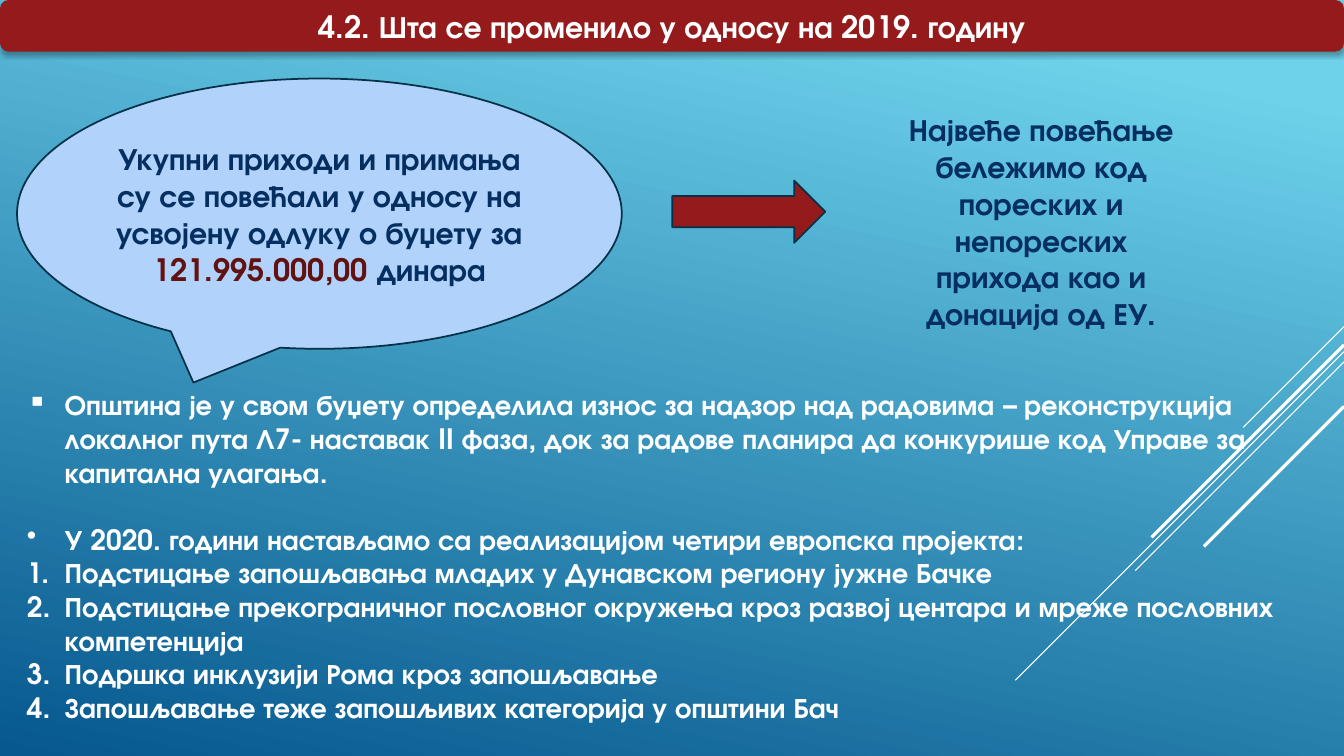
from lxml.etree import SubElement
from pptx import Presentation
from pptx.dml.color import RGBColor
from pptx.enum.shapes import MSO_CONNECTOR, MSO_SHAPE
from pptx.enum.text import MSO_ANCHOR, MSO_AUTO_SIZE, PP_ALIGN
from pptx.oxml.ns import qn
from pptx.util import Cm, Pt

SKY = RGBColor(0x6E, 0xD2, 0xEB)
DEEP_BLUE = RGBColor(0x06, 0x58, 0x8E)
WHITE = RGBColor(0xFF, 0xFF, 0xFF)
RED = RGBColor(0x94, 0x1A, 0x1B)
DARK_RED = RGBColor(0x63, 0x12, 0x12)
PALE_BLUE = RGBColor(0xB1, 0xD3, 0xFB)
NAVY = RGBColor(0x05, 0x2F, 0x61)
OUTLINE = RGBColor(0x04, 0x31, 0x48)

WIDTH, HEIGHT = 33.87, 19.05
DIAGONALS = [(8.23, 2.54, 0.75), (8.86, 8.28, 0.75), (9.12, 5.26, 0.75),
             (8.69, 4.85, 2.25), (10.24, 3.53, 2.25)]
POINTS = [
    ("▪", "Општина је у свом буџету определила износ за надзор над радовима – реконструкција "
          "локалног пута Л7- наставак II фаза, док за радове планира да конкурише код Управе за "
          "капитална улагања.", 24),
    ("•", "У 2020. години настављамо са реализацијом четири европска пројекта:", 0),
    (None, "Подстицање запошљавања младих у Дунавском региону јужне Бачке", 0),
    (None, "Подстицање прекограничног пословног окружења кроз развој центара и мреже пословних "
           "компетенција", 0),
    (None, "Подршка инклузији Рома кроз запошљавање", 0),
    (None, "Запошљавање теже запошљивих категорија у општини Бач", 0),
]


def add_text(paragraph, text, size=22, color=WHITE, font="TeX Gyre Adventor", bold=True):
    """Append a formatted run to a paragraph."""
    run = paragraph.add_run()
    run.text = text
    run.font.name = font
    run.font.size = Pt(size)
    run.font.bold = bold
    run.font.color.rgb = color


class SlideBuilder:
    """Draw styled elements on the current slide, with lengths in centimetres."""

    def __init__(self, slide):
        self.slide = slide

    def background(self, start, end, angle):
        fill = self.slide.background.fill
        fill.gradient()
        fill.gradient_angle = 360 - angle
        for stop, color, position in zip(fill.gradient_stops, (start, end), (0.1, 1)):
            stop.color.rgb = color
            stop.position = position

    def diagonal(self, top, length, weight):
        line = self.slide.shapes.add_connector(
            MSO_CONNECTOR.STRAIGHT, Cm(WIDTH), Cm(top), Cm(WIDTH - length), Cm(top + length))
        line.line.color.rgb = WHITE
        line.line.width = Pt(weight)
        SubElement(line._element.spPr, qn("a:effectLst"))

    def shape(self, kind, left, top, width, height, fill=None, line=None, texts=()):
        shape = self.slide.shapes.add_shape(kind, Cm(left), Cm(top), Cm(width), Cm(height))
        shape.shadow.inherit = False
        if fill is None:
            shape.fill.background()
        else:
            shape.fill.solid()
            shape.fill.fore_color.rgb = fill
        if line is None:
            shape.line.fill.background()
        else:
            shape.line.color.rgb = line
            shape.line.width = Pt(1.25)
        shape.text_frame.word_wrap = True
        shape.text_frame.vertical_anchor = MSO_ANCHOR.MIDDLE
        paragraph = shape.text_frame.paragraphs[0]
        paragraph.alignment = PP_ALIGN.CENTER
        for text, color in texts:
            add_text(paragraph, text, color=color)
        return shape

    def drop_shadow(self, shape, blur, distance, opacity):
        effects = shape._element.spPr.find(qn("a:effectLst"))
        shadow = SubElement(effects, qn("a:outerShdw"), blurRad=str(Pt(blur)),
                            dist=str(Pt(distance)), dir="5400000", rotWithShape="0")
        color = SubElement(shadow, qn("a:srgbClr"), val="000000")
        SubElement(color, qn("a:alpha"), val=str(opacity * 1000))

    def bullet_list(self, left, top, width, height, points):
        frame = self.slide.shapes.add_textbox(
            Cm(left), Cm(top), Cm(width), Cm(height)).text_frame
        frame.word_wrap = True
        frame.auto_size = MSO_AUTO_SIZE.SHAPE_TO_FIT_TEXT
        for index, (bullet, text, space_after) in enumerate(points):
            paragraph = frame.add_paragraph() if index else frame.paragraphs[0]
            paragraph.space_after = Pt(space_after)
            add_text(paragraph, text, size=20)
            properties = paragraph._p.get_or_add_pPr()
            properties.set("marL", str(Cm(0.95)))
            properties.set("indent", str(-Cm(0.95)))
            if bullet:
                SubElement(properties, qn("a:buChar"), char=bullet)
            else:
                SubElement(properties, qn("a:buAutoNum"), type="arabicPeriod")


def main():
    presentation = Presentation()
    presentation.slide_width = Cm(WIDTH)
    presentation.slide_height = Cm(HEIGHT)
    builder = SlideBuilder(presentation.slides.add_slide(presentation.slide_layouts[6]))

    builder.background(SKY, DEEP_BLUE, 102)
    for top, length, weight in DIAGONALS:
        builder.diagonal(top, length, weight)

    title = builder.shape(
        MSO_SHAPE.ROUNDED_RECTANGLE, 0, 0, WIDTH, 1.3, fill=RED,
        texts=[("4.2. Шта се променило у односу на 2019. годину", WHITE)])
    builder.drop_shadow(title, 3.5, 2.2, 32)

    builder.shape(
        MSO_SHAPE.OVAL_CALLOUT, 0.43, 1.98, 15.24, 6.81, fill=PALE_BLUE, line=OUTLINE,
        texts=[("Укупни приходи и примања су се повећали у односу на усвојену одлуку о буџету за ",
                NAVY), ("121.995.000,00 ", DARK_RED), ("динара", NAVY)])
    builder.shape(MSO_SHAPE.RIGHT_ARROW, 16.94, 4.55, 3.86, 1.57, fill=RED, line=OUTLINE)
    builder.shape(
        MSO_SHAPE.TEAR, 21.11, 1.5, 10.26, 8.15,
        texts=[("Највеће повећање бележимо код пореских и непореских прихода као и донација од ЕУ.",
                NAVY)])
    builder.bullet_list(0.43, 9.65, 33.02, 9.4, POINTS)

    presentation.save("out.pptx")


if __name__ == "__main__":
    main()
